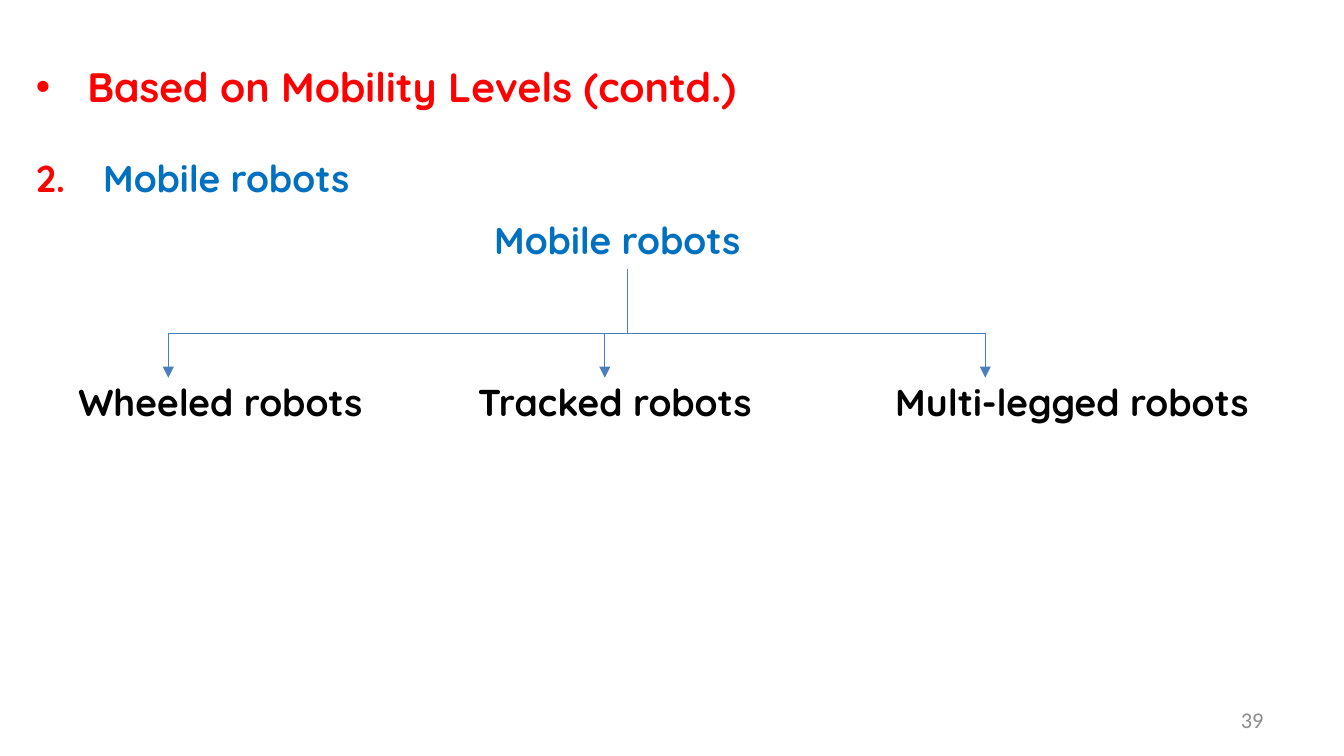
from dataclasses import dataclass
from pptx import Presentation
from pptx.dml.color import RGBColor
from pptx.enum.shapes import MSO_CONNECTOR
from pptx.enum.text import MSO_ANCHOR, PP_ALIGN
from pptx.oxml.ns import qn
from pptx.util import Cm, Pt
from lxml.etree import SubElement

COLORS = {"red": "FF0000", "blue": "0070C0", "black": "000000",
          "gray": "8C8C8C", "line": "4B7EBC"}
BOX_HEIGHT = 1.12
BAR_Y = 6.3
ARROW_END = 7.14


@dataclass
class Label:
    text: str
    left: float
    middle: float
    width: float
    color: str
    size: int = 20
    font: str = "Quicksand"
    bold: bool = True
    align: PP_ALIGN = PP_ALIGN.LEFT
    indent: float = 0
    bullet: tuple = ()


@dataclass
class Branch:
    label: Label
    arrow_x: float


HEADING = Label("Based on Mobility Levels (contd.)", 0.43, 1.63, 24, "red", 22,
                indent=0.97, bullet=("a:buChar", {"char": "•"}))
ITEM = Label("Mobile robots", 0.43, 3.36, 12, "blue", indent=1.27,
             bullet=("a:buAutoNum", {"type": "arabicPeriod", "startAt": "2"}))
ROOT = Label("Mobile robots", 9.09, 4.52, 5.54, "blue")
NUMBER = Label("39", 18.21, 13.61, 5.92, "gray", 12, "Calibri", False, PP_ALIGN.RIGHT)
BRANCHES = [
    Branch(Label("Wheeled robots", 1.23, 7.6, 6.5, "black"), 3.18),
    Branch(Label("Tracked robots", 8.78, 7.6, 6.5, "black"), 11.43),
    Branch(Label("Multi-legged robots", 16.67, 7.6, 8, "black"), 18.62),
]


def add_label(s, label: Label):
    sp = s.shapes.add_textbox(Cm(label.left), Cm(label.middle - BOX_HEIGHT / 2),
                              Cm(label.width), Cm(BOX_HEIGHT))
    tf = sp.text_frame
    frame = {"word_wrap": True, "vertical_anchor": MSO_ANCHOR.MIDDLE,
             "margin_top": 0, "margin_bottom": 0}
    for name, value in frame.items():
        setattr(tf, name, value)
    p = tf.paragraphs[0]
    p.alignment = label.align
    if label.bullet:
        pPr = p._p.get_or_add_pPr()
        pPr.set("marL", str(Cm(label.indent)))
        pPr.set("indent", str(-Cm(label.indent)))
        color = SubElement(pPr, qn("a:buClr"))
        SubElement(color, qn("a:srgbClr"), val=COLORS["red"])
        if label.bullet[0] == "a:buChar":
            SubElement(pPr, qn("a:buFont"), typeface="Arial")
        SubElement(pPr, qn(label.bullet[0]), label.bullet[1])
    r = p.add_run()
    r.text = label.text
    for name, value in {"name": label.font, "size": Pt(label.size), "bold": label.bold}.items():
        setattr(r.font, name, value)
    r.font.color.rgb = RGBColor.from_string(COLORS[label.color])
    return sp


def add_line(s, x1: float, y1: float, x2: float, y2: float, arrow: bool = False):
    line = s.shapes.add_connector(MSO_CONNECTOR.STRAIGHT, Cm(x1), Cm(y1), Cm(x2), Cm(y2))
    line.line.width = Pt(0.75)
    line.line.color.rgb = RGBColor.from_string(COLORS["line"])
    if arrow:
        SubElement(line.line._get_or_add_ln(), qn("a:tailEnd"), type="triangle")
    SubElement(line._element.spPr, qn("a:effectLst"))
    return line


def main() -> None:
    prs = Presentation()
    prs.slide_width, prs.slide_height = Cm(25.4), Cm(14.29)
    s = prs.slides.add_slide(prs.slide_layouts[6])
    for label in (HEADING, ITEM, NUMBER):
        add_label(s, label)
    root = add_label(s, ROOT)
    root_x = ROOT.left + ROOT.width / 2
    stem = add_line(s, root_x, ROOT.middle + BOX_HEIGHT / 2, root_x, BAR_Y)
    stem.begin_connect(root, 2)
    add_line(s, BRANCHES[0].arrow_x, BAR_Y, BRANCHES[-1].arrow_x, BAR_Y)
    for branch in BRANCHES:
        add_label(s, branch.label)
        add_line(s, branch.arrow_x, BAR_Y, branch.arrow_x, ARROW_END, arrow=True)
    prs.save("out.pptx")


if __name__ == "__main__":
    main()
